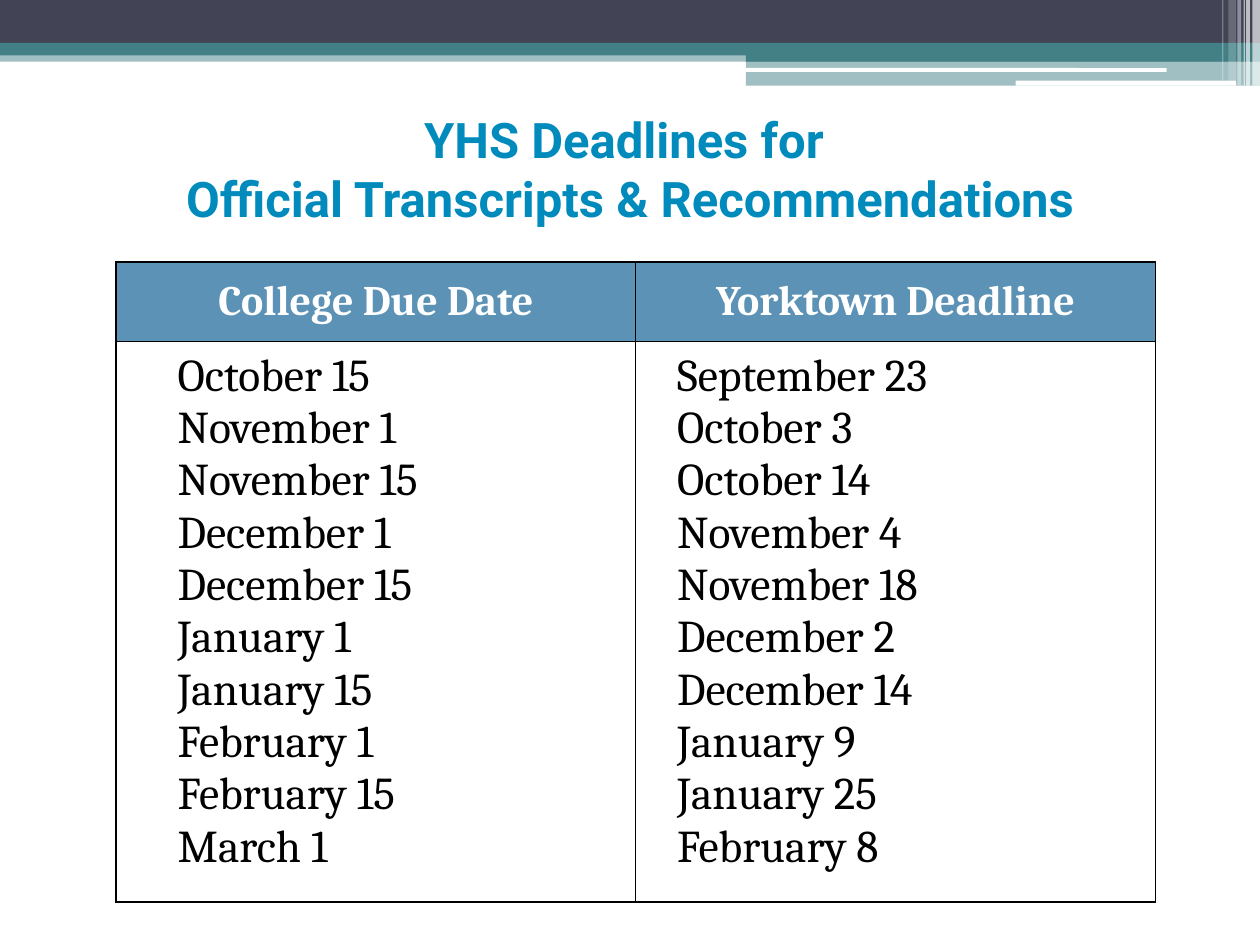
from dataclasses import dataclass

from lxml import etree
from pptx import Presentation
from pptx.dml.color import RGBColor
from pptx.enum.shapes import MSO_SHAPE
from pptx.enum.text import MSO_ANCHOR, PP_ALIGN
from pptx.oxml.ns import qn
from pptx.util import Inches, Pt

RECTANGLE = MSO_SHAPE.RECTANGLE
ROUNDED = MSO_SHAPE.ROUNDED_RECTANGLE
MIDDLE, TOP = MSO_ANCHOR.MIDDLE, MSO_ANCHOR.TOP
CENTER, LEFT = PP_ALIGN.CENTER, PP_ALIGN.LEFT


@dataclass(frozen=True)
class TextStyle:
    font: str
    size: int
    color: str
    bold: bool
    alignment: PP_ALIGN


@dataclass(frozen=True)
class Theme:
    navy: str = "424456"
    teal: str = "438086"
    white: str = "FFFFFF"
    black: str = "000000"
    header: str = "5C92B5"
    title_text: TextStyle = TextStyle("Roboto", 28, "008BBC", True, CENTER)
    header_text: TextStyle = TextStyle("Cambria", 24, "FFFFFF", True, CENTER)
    body_text: TextStyle = TextStyle("Cambria", 26, "000000", False, LEFT)


@dataclass(frozen=True)
class Bar:
    left: float
    top: float
    width: float
    height: float
    color: str
    opacity: int = 100
    kind: MSO_SHAPE = RECTANGLE


@dataclass(frozen=True)
class Column:
    heading: str
    dates: tuple[str, ...]
    indent: float


THEME = Theme()

BANNER = (
    Bar(0, 0.4, 10, 0.09, THEME.teal, 50),
    Bar(0, 0, 10, 0.34, THEME.navy),
    Bar(0, 0.34, 10, 0.1, THEME.teal),
    Bar(5.92, 0.39, 4.08, 0.1, THEME.teal),
    Bar(5.92, 0.48, 4.08, 0.2, THEME.teal, 50),
    Bar(5.91, 0.54, 3.35, 0.03, THEME.white, kind=ROUNDED),
    Bar(8.06, 0.64, 1.75, 0.04, THEME.white, kind=ROUNDED),
)

# Left, width, height and opacity of the light stripes at the right edge
STRIPES = tuple(
    Bar(left, 0, width, height, THEME.white, opacity)
    for left, width, height, opacity in (
        (9.94, 0.06, 0.68, 65),
        (9.89, 0.03, 0.68, 65),
        (9.87, 0.01, 0.68, 60),
        (9.82, 0.03, 0.68, 40),
        (9.75, 0.06, 0.64, 20),
        (9.7, 0.01, 0.64, 30),
    )
)

COLUMNS = (
    Column("College Due Date", (
        "October 15", "November 1", "November 15", "December 1", "December 15",
        "January 1", "January 15", "February 1", "February 15", "March 1",
    ), 0.49),
    Column("Yorktown Deadline", (
        "September 23", "October 3", "October 14", "November 4", "November 18",
        "December 2", "December 14", "January 9", "January 25", "February 8",
    ), 0.33),
)


def draw_bar(slide, bar: Bar) -> None:
    shape = slide.shapes.add_shape(
        bar.kind, Inches(bar.left), Inches(bar.top), Inches(bar.width), Inches(bar.height)
    )
    shape.shadow.inherit = False
    shape.line.fill.background()
    shape.fill.solid()
    shape.fill.fore_color.rgb = RGBColor.from_string(bar.color)
    if bar.opacity < 100:
        color = shape.fill._xPr.find(".//" + qn("a:srgbClr"))
        etree.SubElement(color, qn("a:alpha"), val=str(bar.opacity * 1000))


def write_text(text_frame, text: str, style: TextStyle) -> None:
    text_frame.text = text
    for paragraph in text_frame.paragraphs:
        paragraph.alignment = style.alignment
        for run in paragraph.runs:
            run.font.name = style.font
            run.font.size = Pt(style.size)
            run.font.bold = style.bold
            run.font.color.rgb = RGBColor.from_string(style.color)


def add_borders(cell, color: str) -> None:
    properties = cell._tc.get_or_add_tcPr()
    for position, side in enumerate(("a:lnL", "a:lnR", "a:lnT", "a:lnB")):
        line = etree.Element(qn(side), w=str(Pt(1)))
        fill = etree.SubElement(line, qn("a:solidFill"))
        etree.SubElement(fill, qn("a:srgbClr"), val=color)
        properties.insert(position, line)


def style_cell(cell, text: str, style: TextStyle, fill: str, anchor: MSO_ANCHOR) -> None:
    write_text(cell.text_frame, text, style)
    cell.vertical_anchor = anchor
    cell.fill.solid()
    cell.fill.fore_color.rgb = RGBColor.from_string(fill)
    add_borders(cell, THEME.black)


def draw_title(slide, text: str) -> None:
    title = slide.shapes.add_textbox(Inches(0.5), Inches(0.75), Inches(9), Inches(1.17))
    title.text_frame.word_wrap = True
    title.text_frame.vertical_anchor = MIDDLE
    write_text(title.text_frame, text, THEME.title_text)


def draw_table(slide, columns: tuple[Column, ...]) -> None:
    table = slide.shapes.add_table(
        2, len(columns), Inches(0.92), Inches(2.08), Inches(8.25), Inches(5)
    ).table
    table.rows[0].height = Inches(0.63)
    table.rows[1].height = Inches(4.37)
    for index, column in enumerate(columns):
        style_cell(table.cell(0, index), column.heading, THEME.header_text, THEME.header, MIDDLE)
        body = table.cell(1, index)
        style_cell(body, "\n".join(column.dates), THEME.body_text, THEME.white, TOP)
        body.margin_left = Inches(column.indent)
        body.margin_top = Inches(0.07)


def main() -> None:
    presentation = Presentation()
    presentation.slide_width = Inches(10)
    presentation.slide_height = Inches(7.5)
    slide = presentation.slides.add_slide(presentation.slide_layouts[6])

    # Banner across the top
    for bar in BANNER + STRIPES:
        draw_bar(slide, bar)

    # Title and deadlines
    draw_title(slide, "YHS Deadlines for \nOfficial Transcripts & Recommendations")
    draw_table(slide, COLUMNS)

    presentation.save("out.pptx")


if __name__ == "__main__":
    main()
